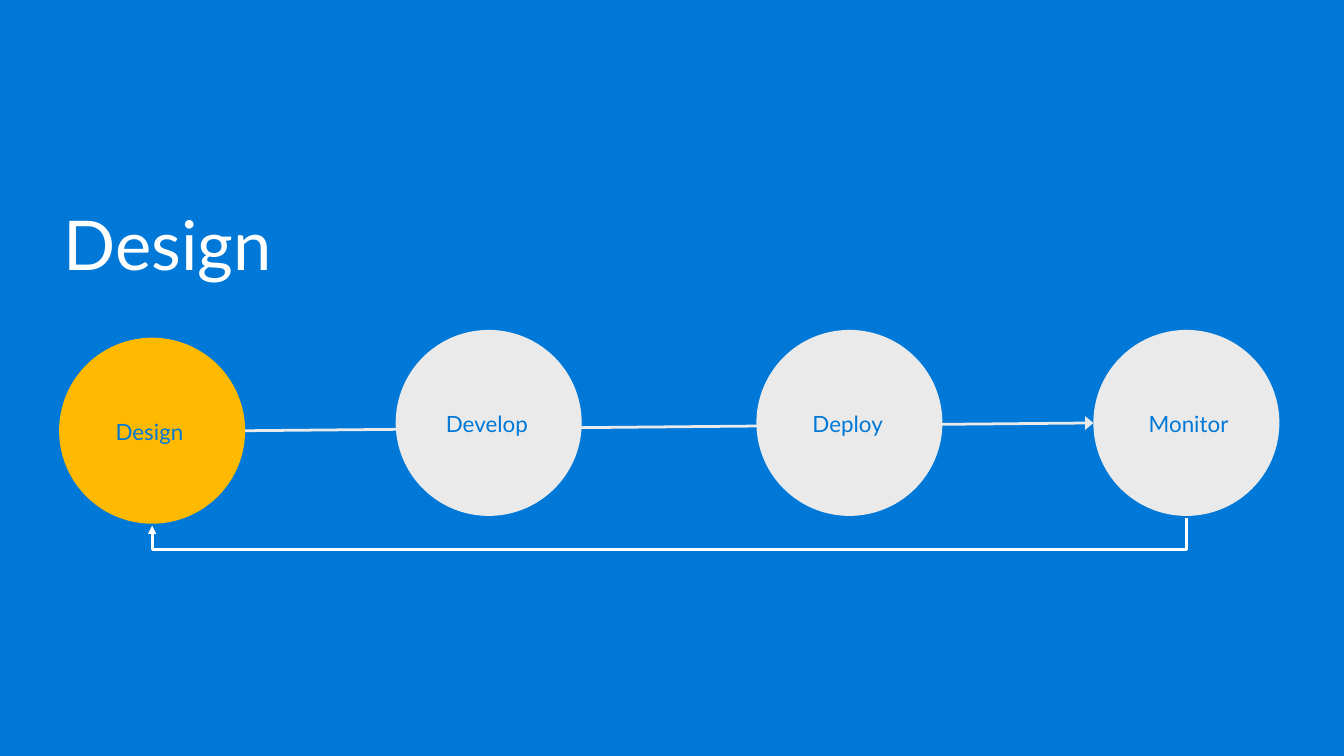
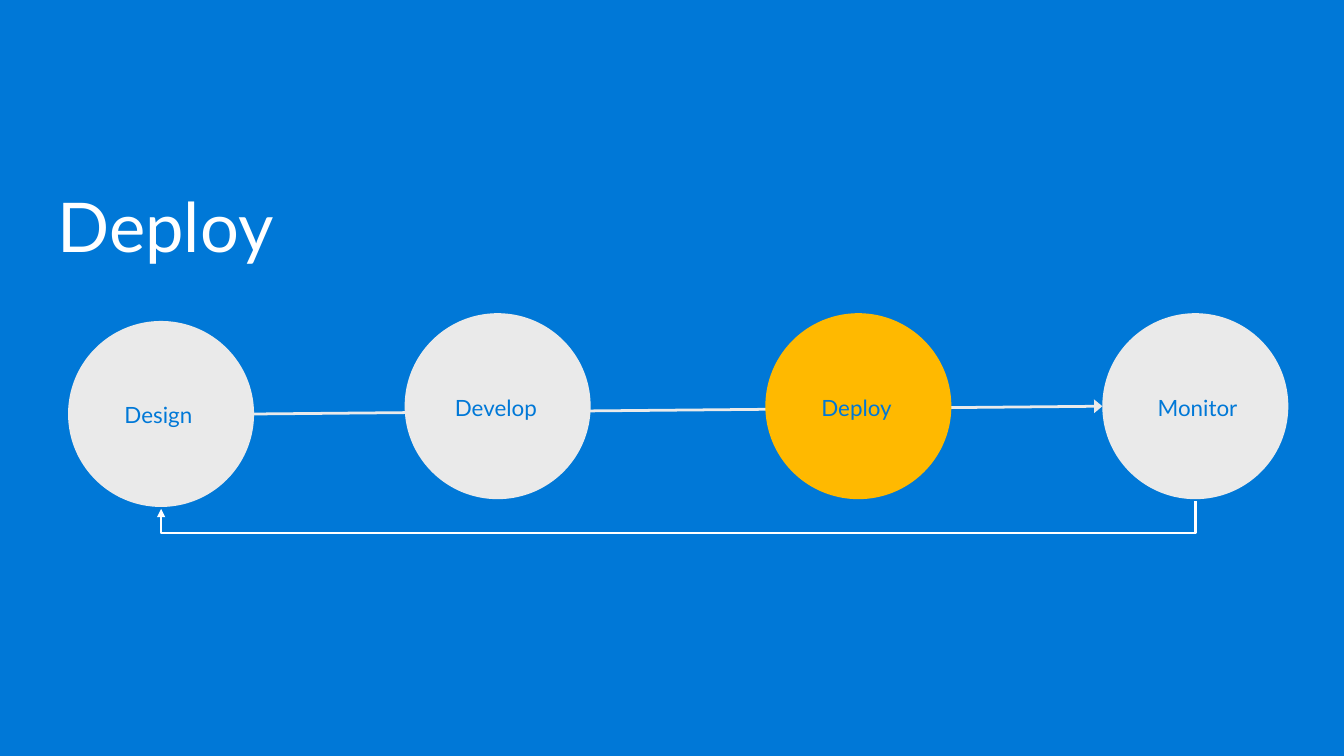
from lxml import etree
from pptx import Presentation
from pptx.dml.color import RGBColor
from pptx.enum.shapes import MSO_CONNECTOR, MSO_SHAPE
from pptx.enum.text import MSO_ANCHOR, PP_ALIGN
from pptx.oxml.ns import qn
from pptx.util import Cm, Pt

BLUE = RGBColor(0x00, 0x78, 0xD7)
GOLD = RGBColor(0xFF, 0xB9, 0x00)
GREY = RGBColor(0xEA, 0xEA, 0xEA)
WHITE = RGBColor(0xFF, 0xFF, 0xFF)
OVAL = MSO_SHAPE.OVAL
LINE = MSO_CONNECTOR.STRAIGHT
ELBOW = MSO_CONNECTOR.ELBOW
TOP = MSO_ANCHOR.TOP
LEFT = PP_ALIGN.LEFT
FONT = "Lato"

SIZE = 4.78
LIFT = 0.2
GAP = 0.05
DROP = 0.82
STEPS = [
    ("Design", 0, LIFT, 1.2, 2.39),
    ("Develop", 8.65, 0, 1.04, 2.67),
    ("Deploy", 17.92, 0, 1.19, 2.51),
    ("Monitor", 26.58, 0, 1.17, 2.92),
]
SLIDES = [
    ("Design", (1.12, 5.03), (1.52, 8.48)),
    ("Deploy", (0.97, 4.55), (1.75, 8.05)),
]


def add_text(slide, box, text, size, color, pad, space=None):
    """Add a text box with one run; box and pad are in centimetres."""
    frame = slide.shapes.add_textbox(*map(Cm, box)).text_frame
    frame.word_wrap = True
    frame.vertical_anchor = TOP
    frame.margin_left = frame.margin_right = Cm(pad[0])
    frame.margin_top = frame.margin_bottom = Cm(pad[1])
    para = frame.paragraphs[0]
    para.alignment = LEFT
    if space:
        para.line_spacing = space
    run = para.add_run()
    run.text = text
    run.font.name = FONT
    run.font.size = Pt(size)
    run.font.color.rgb = color


def add_arrow(slide, kind, ends, color, width):
    """Add a connector whose end has a triangle head of the given width."""
    arrow = slide.shapes.add_connector(kind, *map(Cm, ends))
    arrow.line.color.rgb = color
    arrow.line.width = Pt(2)
    props = arrow.line._get_or_add_ln()
    etree.SubElement(props, qn("a:tailEnd"), type="triangle", w=width, len="med")
    etree.SubElement(arrow._element.spPr, qn("a:effectLst"))
    return arrow


def add_loop(slide, x, y, span):
    """Add the return path from (x + span, y) down, left and up to x."""
    mid_x, mid_y = x + span / 2, y + LIFT / 2
    left, top = mid_x - LIFT / 2, mid_y - span / 2
    ends = (left, top, left + LIFT, top + span)
    loop = add_arrow(slide, ELBOW, ends, WHITE, "med")
    loop._element.spPr.find(qn("a:xfrm")).set("rot", "5400000")
    guides = loop._element.spPr.find(qn("a:prstGeom")).get_or_add_avLst()
    ratio = round(DROP / LIFT * 100000)
    etree.SubElement(guides, qn("a:gd"), name="adj1", fmla=f"val {ratio}")


def add_step(slide, x, y, step, active):
    """Add one circle and its label at the flow origin (x, y)."""
    name, dx, dy, inset, width = step
    disc = slide.shapes.add_shape(OVAL, Cm(x + dx), Cm(y + dy), Cm(SIZE), Cm(SIZE))
    disc.shadow.inherit = False
    disc.fill.solid()
    disc.fill.fore_color.rgb = GOLD if active else GREY
    disc.line.fill.background()
    box = (x + dx + inset, y + dy + 1.82, width, 1.07)
    add_text(slide, box, name, 16.3, BLUE, (0.25, 0.25))


def add_flow(slide, x, y, current):
    """Add the whole cycle with its current step in gold."""
    half = SIZE / 2
    span = STEPS[-1][1]
    ends = (x + SIZE, y + LIFT + half, x + span, y + half)
    add_arrow(slide, LINE, ends, GREY, "lg")
    for step in STEPS:
        add_step(slide, x, y, step, step[0] == current)
    add_loop(slide, x + half, y + SIZE + GAP, span)


def add_stage(deck, title, head, flow):
    """Add one slide with a title at head and the cycle at flow."""
    slide = deck.slides.add_slide(deck.slide_layouts[6])
    slide.background.fill.solid()
    slide.background.fill.fore_color.rgb = BLUE
    add_text(slide, (*head, 25.6, 5.08), title, 50, WHITE, (0.51, 0.41), 0.9)
    add_flow(slide, *flow, title)


def main():
    """Build and save the deck."""
    deck = Presentation()
    deck.slide_width = Cm(34.54)
    deck.slide_height = Cm(19.43)
    for stage in SLIDES:
        add_stage(deck, *stage)
    deck.save("out.pptx")


if __name__ == "__main__":
    main()
